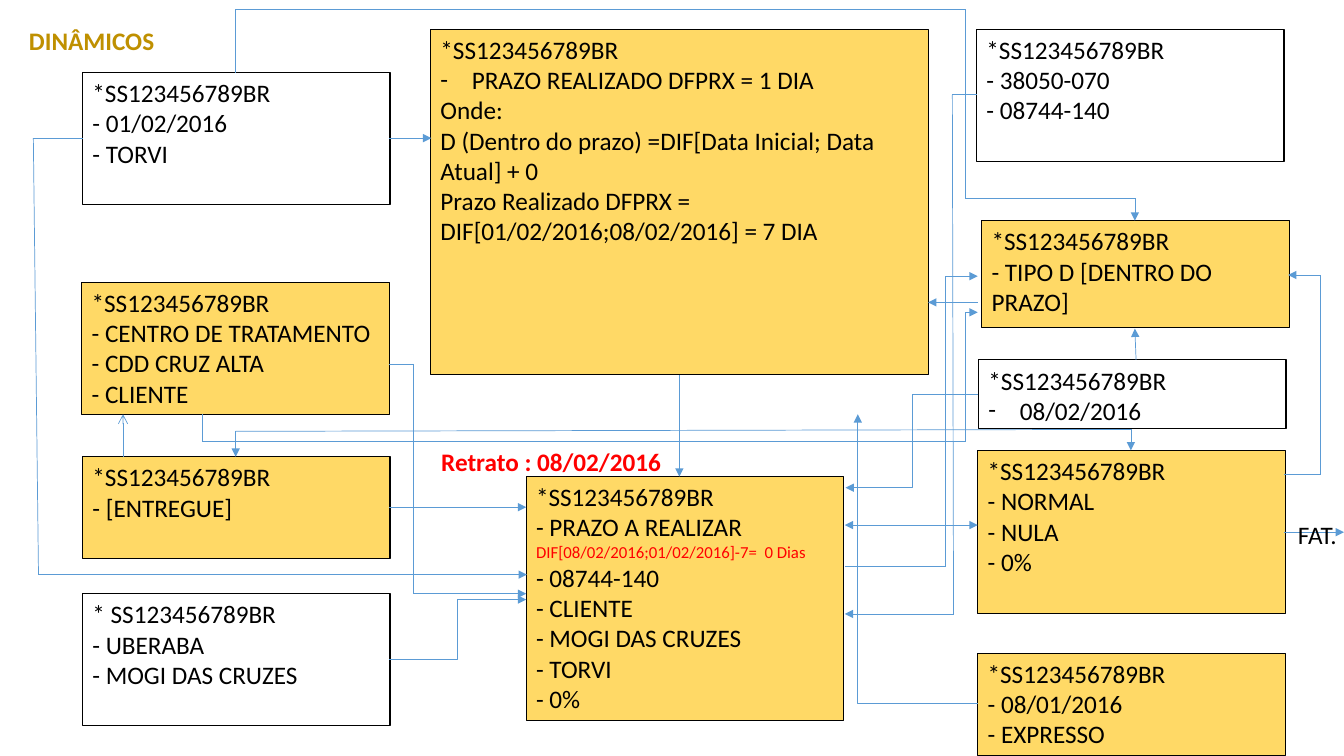
from dataclasses import dataclass
from itertools import pairwise

from lxml.etree import SubElement
from pptx import Presentation
from pptx.dml.color import RGBColor
from pptx.enum.shapes import MSO_CONNECTOR as Connector, MSO_SHAPE as Shape
from pptx.enum.text import MSO_ANCHOR as Anchor, PP_ALIGN as Align
from pptx.oxml.ns import qn
from pptx.util import Cm, Pt


@dataclass(frozen=True)
class Theme:
    font: str = "Calibri"
    ink: str = "000000"
    amber: str = "FFD966"
    gold: str = "BF9000"
    red: str = "FF0000"
    blue: str = "5B9BD5"
    body: int = 18
    small: int = 12
    border: float = 0.75
    wire: float = 0.5


THEME = Theme()
CODE = "*SS123456789BR"
SERVICE = "- TORVI"
BULLET = "• "
FORMULA = "DIF[08/02/2016;01/02/2016]-7=  0 Dias"
WIDE = 7.75

BOXES = [
    (2.08, 1.83, WIDE, 3.33, None, [CODE, "- 01/02/2016", SERVICE]),
    (2.08, 14.96, WIDE, 3.33, None,
     ["* SS123456789BR", "- UBERABA", "- MOGI DAS CRUZES"]),
    (24.64, 16.46, WIDE, 2.57, THEME.amber, [CODE, "- 08/01/2016", "- EXPRESSO"]),
    (24.74, 5.56, WIDE, 2.69, THEME.amber, [CODE, "- TIPO D [DENTRO DO PRAZO]"]),
    (10.85, 0.74, 12.55, 8.71, THEME.amber,
     [CODE, BULLET + "PRAZO REALIZADO DFPRX = 1 DIA", "Onde:",
      "D (Dentro do prazo) =DIF[Data Inicial; Data Atual] + 0",
      "Prazo Realizado DFPRX = DIF[01/02/2016;08/02/2016] = 7 DIA"]),
    (13.26, 12.01, 8, 6.15, THEME.amber,
     [CODE, "- PRAZO A REALIZAR", FORMULA, "- 08744-140", "- CLIENTE",
      "- MOGI DAS CRUZES", SERVICE, "- 0%"]),
    (2.08, 11.51, WIDE, 2.57, THEME.amber, [CODE, "- [ENTREGUE]"]),
    (24.64, 11.35, WIDE, 4.11, THEME.amber, [CODE, "- NORMAL", "- NULA", "- 0%"]),
    (24.66, 9.07, WIDE, 1.73, None, [CODE, BULLET + "08/02/2016"]),
    (2.06, 7.11, WIDE, 3.33, THEME.amber,
     [CODE, "- CENTRO DE TRATAMENTO", "- CDD CRUZ ALTA", "- CLIENTE"]),
    (24.61, 0.74, WIDE, 3.33, None, [CODE, "- 38050-070", "- 08744-140"]),
]

ROUTES = [
    [(9.8, 3.48), (10.87, 3.48)],
    [(24.64, 7.62), (23.39, 7.62)],
    [(17.12, 9.45), (17.12, 12.01)],
    [(9.8, 12.78), (13.26, 12.78)],
    [(24.61, 2.39), (24, 2.39), (24.03, 15.47), (21.29, 15.47)],
    [(2.08, 3.48), (0.84, 3.48), (0.97, 14.48), (13.28, 14.48)],
    [(32.36, 13.41), (33.87, 13.41)],
    [(9.8, 9.17), (10.41, 9.17), (10.41, 14.96), (13.26, 14.96)],
    [(5.94, 1.83), (5.94, 0.23), (24.33, 0.23), (24.33, 5), (28.6, 5), (28.6, 5.56)],
    [(28.63, 9.07), (28.6, 8.28)],
    [(32.36, 11.96), (33.27, 11.96), (33.27, 6.93), (32.46, 6.93)],
    [(5.11, 10.44), (5.11, 11.13), (24.33, 11.13), (24.33, 7.87), (24.64, 7.87)],
    [(21.29, 14.27), (23.83, 14.27), (23.83, 6.96), (24.64, 6.96)],
]

TWO_WAY_ROUTES = [
    [(21.29, 13.23), (24.64, 13.23)],
    [(5.94, 11.51), (5.94, 10.87), (28.5, 10.82), (28.5, 11.35)],
]

ELBOWS = [
    ((24.64, 17.73), (21.62, 10.44), "bentConnector2"),
    ((9.8, 16.61), (13.26, 15.11), "bentConnector3"),
    ((24.66, 9.93), (21.31, 12.29), "bentConnector3"),
]


def add_span(para, text, color, size=THEME.body, bold=False):
    span = para.add_run()
    span.text = text
    span.font.name = THEME.font
    span.font.size = Pt(size)
    span.font.bold = bold
    span.font.color.rgb = RGBColor.from_string(color)


def add_dash_bullet(para):
    props = para._p.get_or_add_pPr()
    props.set("marL", str(Cm(0.79)))
    props.set("indent", str(-Cm(0.79)))
    SubElement(props, qn("a:buFont")).set("typeface", THEME.font)
    SubElement(props, qn("a:buChar")).set("char", "-")


def add_box(page, left, top, width, height, fill, lines):
    box = page.shapes.add_shape(Shape.RECTANGLE, Cm(left), Cm(top), Cm(width), Cm(height))
    box.shadow.inherit = False
    if fill:
        box.fill.solid()
        box.fill.fore_color.rgb = RGBColor.from_string(fill)
    else:
        box.fill.background()
    box.line.color.rgb = RGBColor.from_string(THEME.ink)
    box.line.width = Pt(THEME.border)
    frame = box.text_frame
    frame.word_wrap = True
    frame.vertical_anchor = Anchor.TOP
    for index, line in enumerate(lines):
        para = frame.add_paragraph() if index else frame.paragraphs[0]
        para.alignment = Align.LEFT
        if line.startswith(BULLET):
            add_dash_bullet(para)
        if line == FORMULA:
            add_span(para, line, THEME.red, THEME.small)
        else:
            add_span(para, line.removeprefix(BULLET), THEME.ink)


def add_label(page, left, top, width, text, color, bold=False, wrap=True):
    box = page.shapes.add_textbox(Cm(left), Cm(top), Cm(width), Cm(1.02))
    box.text_frame.word_wrap = wrap
    add_span(box.text_frame.paragraphs[0], text, color, bold=bold)


def add_wire(page, start, end, head=None, tail=None, geometry="line"):
    kind = Connector.STRAIGHT if geometry == "line" else Connector.ELBOW
    wire = page.shapes.add_connector(kind, *map(Cm, start + end))
    wire.line.color.rgb = RGBColor.from_string(THEME.blue)
    wire.line.width = Pt(THEME.wire)
    props = wire._element.spPr
    props.find(qn("a:prstGeom")).set("prst", geometry)
    SubElement(props, qn("a:effectLst"))
    outline = props.find(qn("a:ln"))
    for tag, style in (("a:headEnd", head), ("a:tailEnd", tail)):
        if style:
            SubElement(outline, qn(tag)).set("type", style)


def add_route(page, points, head=None, tail="triangle"):
    segments = list(pairwise(points))
    last = len(segments) - 1
    for index, (start, end) in enumerate(segments):
        add_wire(page, start, end, head if index == 0 else None,
                 tail if index == last else None)


def main():
    deck = Presentation()
    deck.slide_width, deck.slide_height = Cm(33.87), Cm(19.05)
    page = deck.slides.add_slide(deck.slide_layouts[6])
    for box in BOXES:
        add_box(page, *box)
    for points in ROUTES:
        add_route(page, points)
    for points in TWO_WAY_ROUTES:
        add_route(page, points, head="triangle")
    for start, end, geometry in ELBOWS:
        add_wire(page, start, end, tail="triangle", geometry=geometry)
    add_route(page, [(3.1, 11.51), (3.1, 10.44)], tail="arrow")
    add_label(page, 0.48, 0.51, 3.71, "DINÂMICOS", THEME.gold, bold=True, wrap=False)
    add_label(page, 10.87, 11.13, 6.86, "Retrato : 08/02/2016", THEME.red, bold=True)
    add_label(page, 32.46, 12.95, 1.83, "FAT.", THEME.ink)
    deck.save("out.pptx")


if __name__ == "__main__":
    main()
